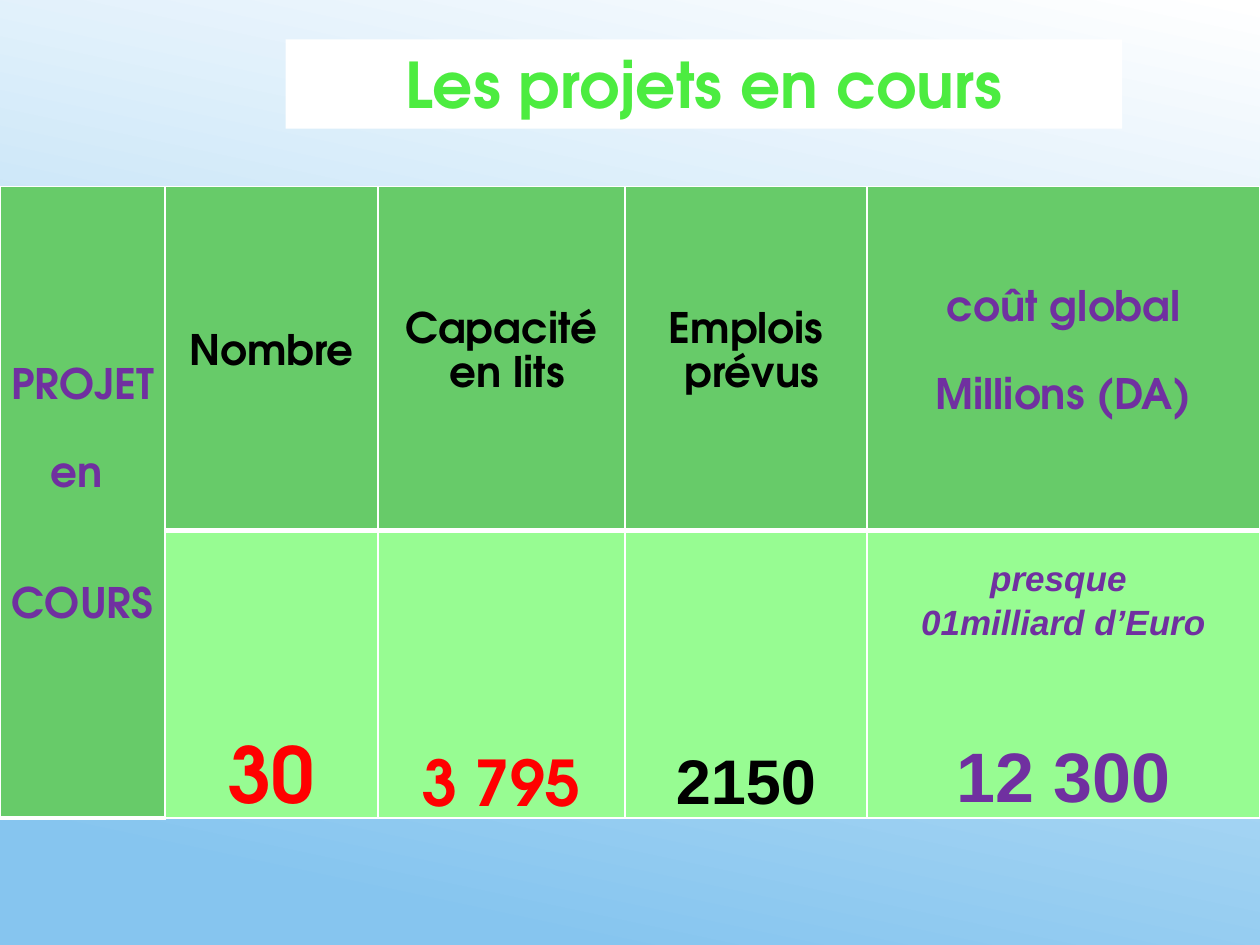
import pptx
import pptx.dml.color
import pptx.enum.text
import pptx.oxml
import pptx.oxml.ns
import pptx.util

Pt = pptx.util.Pt
ALIGN = pptx.enum.text.PP_ALIGN
ANCHOR = pptx.enum.text.MSO_ANCHOR

COLORS = {
    "white": "FFFFFF", "sky": "86C5EF", "title": "4CEC40", "header": "67CB69",
    "body": "97FC92", "purple": "7030A0", "black": "000000", "red": "FF0000",
}
DISPLAY, PLAIN = "TeX Gyre Adventor", "Arial"
LINE, GAP = 17, 8  # exact line height and space after each paragraph
COLUMNS = [94.3, 121.7, 141.1, 138.3, 224.6]
ROWS = [196.6, 164.2]

# A line is (text, size, font, colour, italic, empty lines below).
HEADERS = [
    [("PROJET ", 24, DISPLAY, "purple", False, 1),
     ("en ", 24, DISPLAY, "purple", False, 2),
     ("COURS", 24, DISPLAY, "purple", False, 0)],
    [("Nombre", 24, DISPLAY, "black", False, 0)],
    [("Capacité", 24, DISPLAY, "black", False, 0),
     (" en lits", 24, DISPLAY, "black", False, 0)],
    [("Emplois", 24, DISPLAY, "black", False, 0),
     (" prévus", 24, DISPLAY, "black", False, 0)],
    [("coût global", 24, DISPLAY, "purple", False, 1),
     ("Millions (DA)", 24, DISPLAY, "purple", False, 0)],
]
VALUES = [
    [("30", 44, DISPLAY, "red", False, 0)],
    [("3 795", 36, DISPLAY, "red", False, 0)],
    [("2150", 36, PLAIN, "black", False, 0)],
    [("presque ", 20, PLAIN, "purple", True, 0),
     ("01milliard d’Euro", 20, PLAIN, "purple", True, 3),
     ("12 300", 40, PLAIN, "purple", False, 0)],
]


def rgb(name):
    return pptx.dml.color.RGBColor.from_string(COLORS[name])


def set_all(target, values):
    for name, value in values.items():
        setattr(target, name, value)


def fill_solid(target, color):
    target.fill.solid()
    target.fill.fore_color.rgb = rgb(color)


def write_line(paragraph, text, size, font, color, italic=False):
    paragraph.alignment = ALIGN.CENTER
    run = paragraph.add_run()
    run.text = text
    set_all(run.font, {"size": Pt(size), "name": font, "bold": True, "italic": italic})
    run.font.color.rgb = rgb(color)


def write_cell(cell, lines, anchor):
    set_all(cell, {"vertical_anchor": anchor, "margin_left": Pt(5), "margin_right": Pt(5),
                   "margin_top": 0, "margin_bottom": 0})
    frame = cell.text_frame
    for index, (*line, empty_lines) in enumerate(lines):
        paragraph = frame.add_paragraph() if index else frame.paragraphs[0]
        write_line(paragraph, *line)
        set_all(paragraph, {"line_spacing": Pt(LINE),
                            "space_after": Pt(GAP + empty_lines * (LINE + GAP))})


def style_cell(cell, color, borders):
    """Set white borders, given as {side: points}, and then the fill."""
    properties = cell._tc.get_or_add_tcPr()
    for side, width in borders.items():
        properties.append(pptx.oxml.parse_xml(
            f'<a:ln{side} {pptx.oxml.ns.nsdecls("a")} w="{Pt(width)}"><a:solidFill>'
            f'<a:srgbClr val="{COLORS["white"]}"/></a:solidFill></a:ln{side}>'))
    fill_solid(cell, color)


def paint_background(slide):
    fill = slide.background.fill
    fill.gradient()
    fill.gradient_angle = 258
    for stop, color, position in zip(fill.gradient_stops, ("white", "sky"), (0, 0.9)):
        stop.color.rgb = rgb(color)
        stop.position = position


def add_title(slide, left, top, width, height):
    box = slide.shapes.add_textbox(Pt(left), Pt(top), Pt(width), Pt(height))
    fill_solid(box, "white")
    box.text_frame.word_wrap = True
    write_line(box.text_frame.paragraphs[0], "Les projets en cours", 36, DISPLAY, "title")


def add_projects_table(slide, left, top):
    table = slide.shapes.add_table(
        len(ROWS), len(COLUMNS), Pt(left), Pt(top), Pt(sum(COLUMNS)), Pt(sum(ROWS))).table
    set_all(table, {"first_row": False, "horz_banding": False})
    for column, width in zip(table.columns, COLUMNS):
        column.width = Pt(width)
    for row, height in zip(table.rows, ROWS):
        row.height = Pt(height)
    table.cell(0, 0).merge(table.cell(1, 0))

    for index, lines in enumerate(HEADERS):
        write_cell(table.cell(0, index), lines, ANCHOR.MIDDLE)
    for index, lines in enumerate(VALUES, start=1):
        write_cell(table.cell(1, index), lines, ANCHOR.BOTTOM)
    for row in range(len(ROWS)):
        for column in range(len(COLUMNS)):
            if row == 0 or column == 0:
                color, borders = "header", {"L": 1, "R": 1, "T": 1, "B": 3}
            else:
                color, borders = "body", {"L": 1, "R": 1, "B": 1}
            style_cell(table.cell(row, column), color, borders)


def main():
    presentation = pptx.Presentation()
    set_all(presentation, {"slide_width": Pt(720), "slide_height": Pt(540)})
    slide = presentation.slides.add_slide(presentation.slide_layouts[6])
    paint_background(slide)
    add_projects_table(slide, 0, 106.6)
    add_title(slide, 163.2, 22.5, 478, 51)
    presentation.save("out.pptx")


if __name__ == "__main__":
    main()
